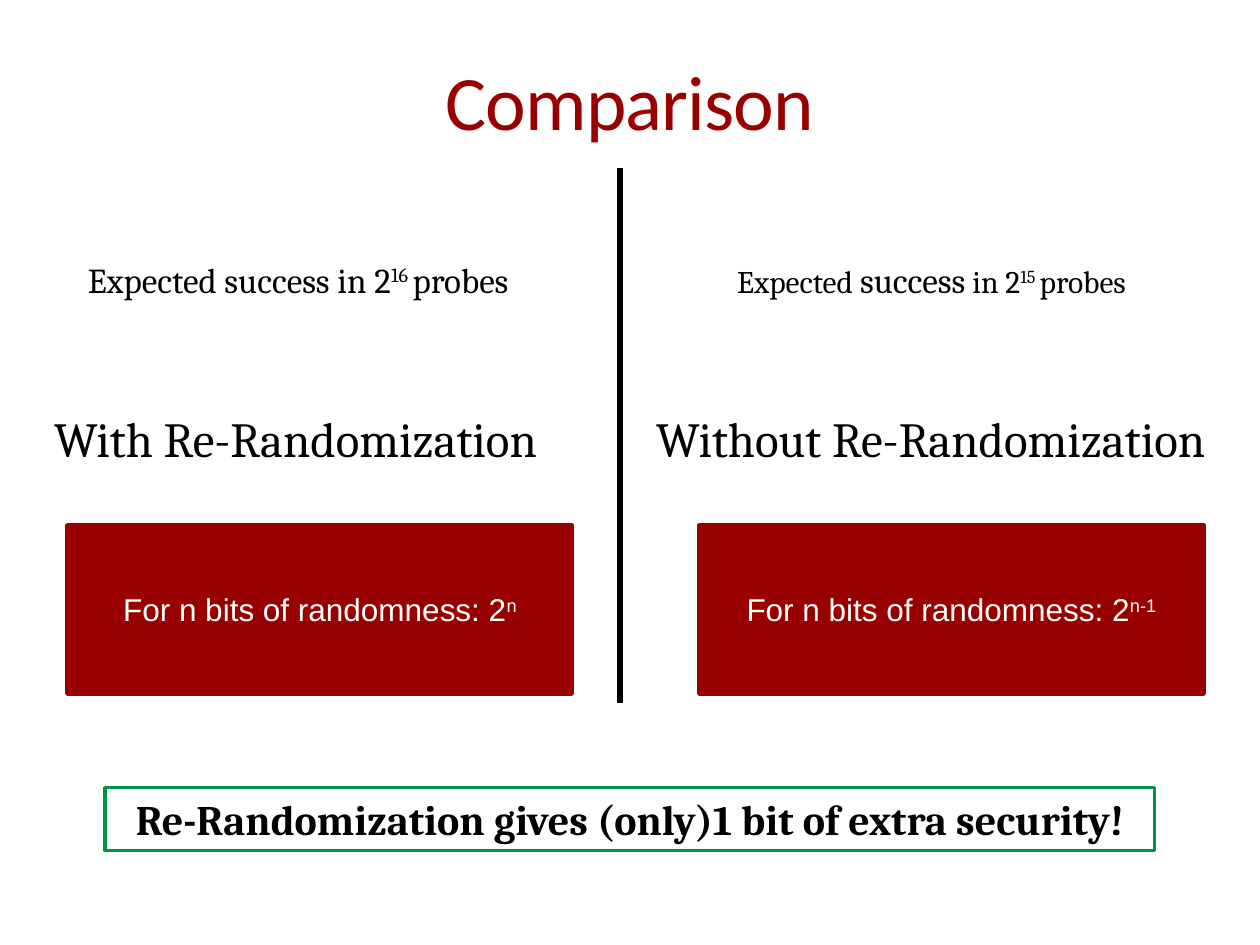
from lxml.etree import SubElement
from pptx import Presentation
from pptx.dml.color import RGBColor
from pptx.enum.shapes import MSO_CONNECTOR as Connector, MSO_SHAPE as Shape
from pptx.enum.text import MSO_ANCHOR as Anchor, PP_ALIGN as Align
from pptx.oxml.ns import qn
from pptx.util import Cm, Pt

BLACK, WHITE, RED, GREEN = "000000", "FFFFFF", "990000", "009446"


def color(code):
    return RGBColor.from_string(code)


def add_span(para, text, size, font="Cambria", code=BLACK, bold=False, raised=False):
    span = para.add_run()
    span.text = text
    span.font.name = font
    span.font.size = Pt(size)
    span.font.bold = bold
    span.font.color.rgb = color(code)
    if raised:
        span.font._element.set("baseline", "30000")
    return span


def add_text_box(page, left, top, width, height, anchor=Anchor.MIDDLE, wrap=True):
    box = page.shapes.add_textbox(Cm(left), Cm(top), Cm(width), Cm(height))
    box.text_frame.word_wrap = wrap
    box.text_frame.vertical_anchor = anchor
    return box


def add_panel(page, left, top, width, height, fill, border, weight, anchor):
    box = page.shapes.add_shape(Shape.RECTANGLE, Cm(left), Cm(top), Cm(width), Cm(height))
    box.shadow.inherit = False
    box.fill.solid()
    box.fill.fore_color.rgb = color(fill)
    box.line.color.rgb = color(border)
    box.line.width = Pt(weight)
    box.text_frame.word_wrap = True
    box.text_frame.vertical_anchor = anchor
    para = box.text_frame.paragraphs[0]
    para.alignment = Align.CENTER
    return para


def add_title(page, left, top, width, height):
    frame = add_text_box(page, left, top, width, height).text_frame
    frame.margin_left = frame.margin_right = 0
    para = frame.paragraphs[0]
    para.alignment = Align.CENTER
    span = add_span(para, "Comparison", 44, "Calibri", RED)
    span.font._element.set("spc", "-50")


def add_divider(page, x, top, height):
    line = page.shapes.add_connector(
        Connector.STRAIGHT, Cm(x), Cm(top), Cm(x), Cm(top + height))
    line.line.color.rgb = color(BLACK)
    line.line.width = Pt(3)
    SubElement(line._element.spPr, qn("a:effectLst"))


def add_column(page, left, top, width, heading, probes, probes_inset, probes_width,
               exponent, formula_inset):
    probes_box = add_text_box(page, left + probes_inset, top, probes_width, 1.12,
                              Anchor.TOP, wrap=False)
    for text, size, raised in probes:
        add_span(probes_box.text_frame.paragraphs[0], text, size, raised=raised)

    heading_box = add_text_box(page, left, top + 3.02, width, 1.45)
    add_span(heading_box.text_frame.paragraphs[0], heading, 28)

    para = add_panel(page, left + formula_inset, top + 5.51, 10.16, 3.38,
                     RED, RED, 3, Anchor.MIDDLE)
    add_span(para, "For n bits of randomness: 2", 18, "Arial", WHITE)
    add_span(para, exponent, 18, "Arial", WHITE, raised=True)


def add_conclusion(page, left, top, width, height):
    para = add_panel(page, left, top, width, height, WHITE, GREEN, 2, Anchor.TOP)
    add_span(para, "Re-Randomization gives (only)1 bit of extra security!", 24, bold=True)


def main():
    deck = Presentation()
    deck.slide_width, deck.slide_height = Cm(25.4), Cm(19.05)
    page = deck.slides.add_slide(deck.slide_layouts[6])

    add_title(page, 1.27, 0.43, 22.86, 3.18)
    add_divider(page, 12.5, 3.38, 10.79)
    add_column(page, 0.84, 5.08, 11.23, "With Re-Randomization",
               [("Expected success in 2", 20, False), ("16 ", 20, True),
                ("probes", 20, False)],
               0.68, 9.86, "n", 0.53)
    add_column(page, 12.98, 5.08, 12.42, "Without Re-Randomization",
               [("Expected ", 18, False), ("success", 20, False), (" in 2", 18, False),
                ("15 ", 18, True), ("probes", 18, False)],
               1.63, 9.17, "n-1", 1.12)
    add_conclusion(page, 2.12, 15.88, 21.16, 1.27)

    deck.save("out.pptx")


if __name__ == "__main__":
    main()
